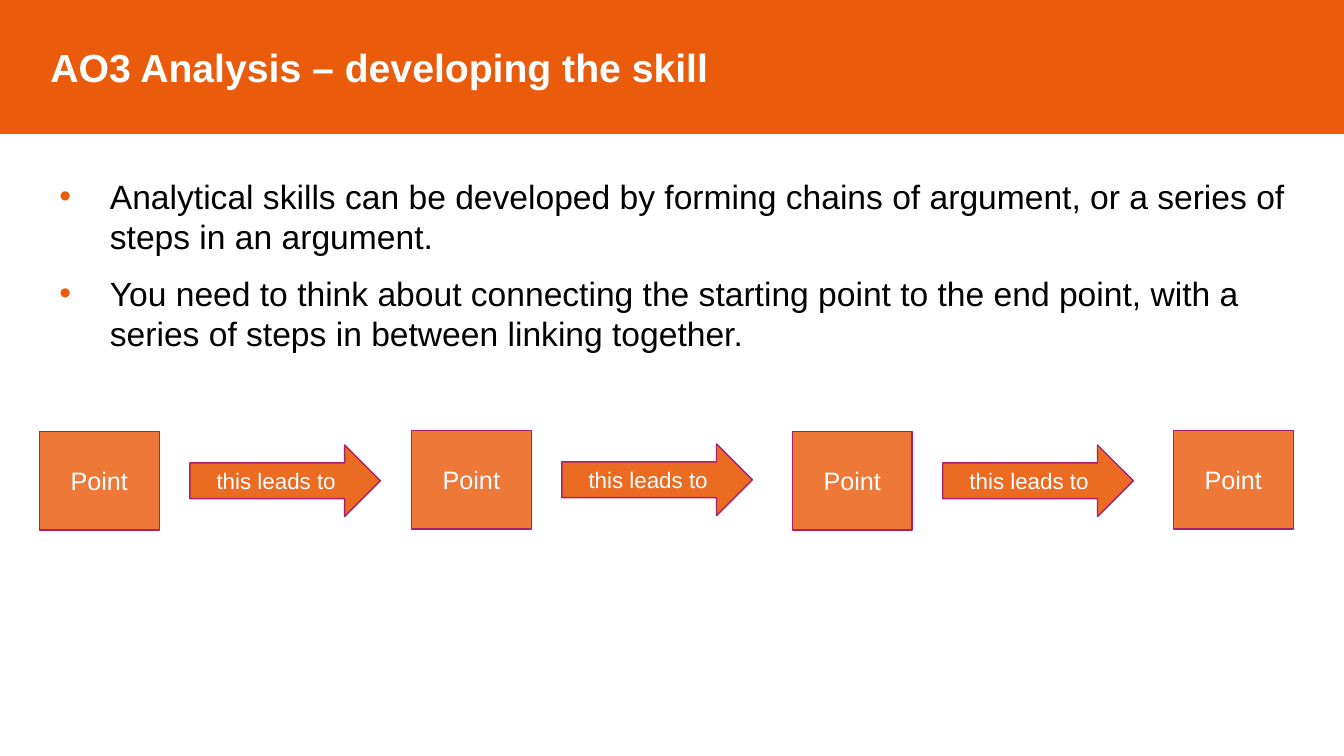
from dataclasses import dataclass

from lxml.etree import SubElement
from pptx import Presentation
from pptx.dml.color import RGBColor as Color
from pptx.enum.shapes import MSO_SHAPE as Preset
from pptx.enum.text import MSO_ANCHOR as Anchor, MSO_AUTO_SIZE as AutoSize, PP_ALIGN as Align
from pptx.oxml.ns import qn
from pptx.util import Pt


@dataclass(frozen=True)
class Theme:
    font: str = "Arial"
    orange: str = "EA5B0C"
    plum: str = "A8216B"
    white: str = "FFFFFF"
    black: str = "000000"
    title_size: float = 28
    body_size: float = 24
    point_size: float = 18
    link_size: float = 16


@dataclass(frozen=True)
class ChainStep:
    text: str
    preset: Preset
    width: float
    height: float
    size: float
    opacity: int


THEME = Theme()
POINT = ChainStep("Point", Preset.RECTANGLE, 85.7, 70.6, THEME.point_size, 82)
LINK = ChainStep("this leads to", Preset.RIGHT_ARROW, 136.1, 51.1, THEME.link_size, 90)
POINT_LEFTS = (28.1, 293.8, 565.9, 838.1)
LINK_OFFSET = 107.5
CHAIN_MIDDLES = (343.4, 342.7)
TITLE = "AO3 Analysis – developing the skill"
BULLETS = (
    "Analytical skills can be developed by forming chains of argument, "
    "or a series of steps in an argument.",
    "You need to think about connecting the starting point to the end point, "
    "with a series of steps in between linking together.",
)


def apply_format(target, values: dict) -> None:
    for name, value in values.items():
        setattr(target, name, value)


def place(shape, left: float, top: float, width: float, height: float) -> None:
    apply_format(shape, {"left": Pt(left), "top": Pt(top),
                         "width": Pt(width), "height": Pt(height)})


def write(para, text: str, size: float, color: str, bold: bool = False) -> None:
    span = para.add_run()
    span.text = text
    apply_format(span.font, {"name": THEME.font, "size": Pt(size), "bold": bold})
    span.font.color.rgb = Color.from_string(color)


def paint(shape, line: str) -> None:
    shape.fill.solid()
    shape.fill.fore_color.rgb = Color.from_string(THEME.orange)
    shape.line.color.rgb = Color.from_string(line)
    shape.line.width = Pt(1)


def set_opacity(shape, percent: int) -> None:
    color = shape.fill._xPr.find(qn("a:solidFill"))[0]
    SubElement(color, qn("a:alpha"), val=str(percent * 1000))


def set_indent(para, margin: float, first: float) -> None:
    properties = para._p.get_or_add_pPr()
    properties.set("marL", str(Pt(margin)))
    properties.set("indent", str(Pt(first)))


def add_bullet(para) -> None:
    properties = para._p.get_or_add_pPr()
    color = SubElement(properties, qn("a:buClr"))
    SubElement(color, qn("a:srgbClr"), val=THEME.orange)
    SubElement(properties, qn("a:buFont"), typeface=THEME.font)
    SubElement(properties, qn("a:buChar"), char="•")


def fill_title(title) -> None:
    place(title, 0, 0, 960, 95)
    paint(title, THEME.orange)
    apply_format(title.text_frame, {"auto_size": AutoSize.NONE, "word_wrap": True,
                                    "vertical_anchor": Anchor.MIDDLE})
    para = title.text_frame.paragraphs[0]
    para.alignment = Align.LEFT
    set_indent(para, 28.8, 0)
    write(para, TITLE, THEME.title_size, THEME.white, bold=True)


def fill_body(body) -> None:
    place(body, 35.3, 121.7, 907.2, 177.1)
    frame = body.text_frame
    apply_format(frame, {"auto_size": AutoSize.NONE, "word_wrap": True,
                         "vertical_anchor": Anchor.TOP})
    for index, text in enumerate(BULLETS):
        para = frame.add_paragraph() if index else frame.paragraphs[0]
        apply_format(para, {"space_before": Pt(0), "space_after": Pt(12)})
        set_indent(para, 36, -36)
        add_bullet(para)
        write(para, text, THEME.body_size, THEME.black)


def add_step(page, step: ChainStep, left: float, middle: float) -> None:
    box = page.shapes.add_shape(step.preset, 0, 0, 0, 0)
    place(box, left, middle - step.height / 2, step.width, step.height)
    box.shadow.inherit = False
    paint(box, THEME.plum)
    set_opacity(box, step.opacity)
    apply_format(box.text_frame, {"word_wrap": True, "vertical_anchor": Anchor.MIDDLE})
    para = box.text_frame.paragraphs[0]
    para.alignment = Align.CENTER
    write(para, step.text, step.size, THEME.white)


def main() -> None:
    deck = Presentation()
    apply_format(deck, {"slide_width": Pt(960), "slide_height": Pt(540)})
    page = deck.slides.add_slide(deck.slide_layouts[1])
    fill_title(page.shapes.title)
    fill_body(page.placeholders[1])
    for index, left in enumerate(POINT_LEFTS):
        middle = CHAIN_MIDDLES[index % 2]
        add_step(page, POINT, left, middle)
        if index < len(POINT_LEFTS) - 1:
            add_step(page, LINK, left + LINK_OFFSET, middle)
    deck.save("out.pptx")


if __name__ == "__main__":
    main()
